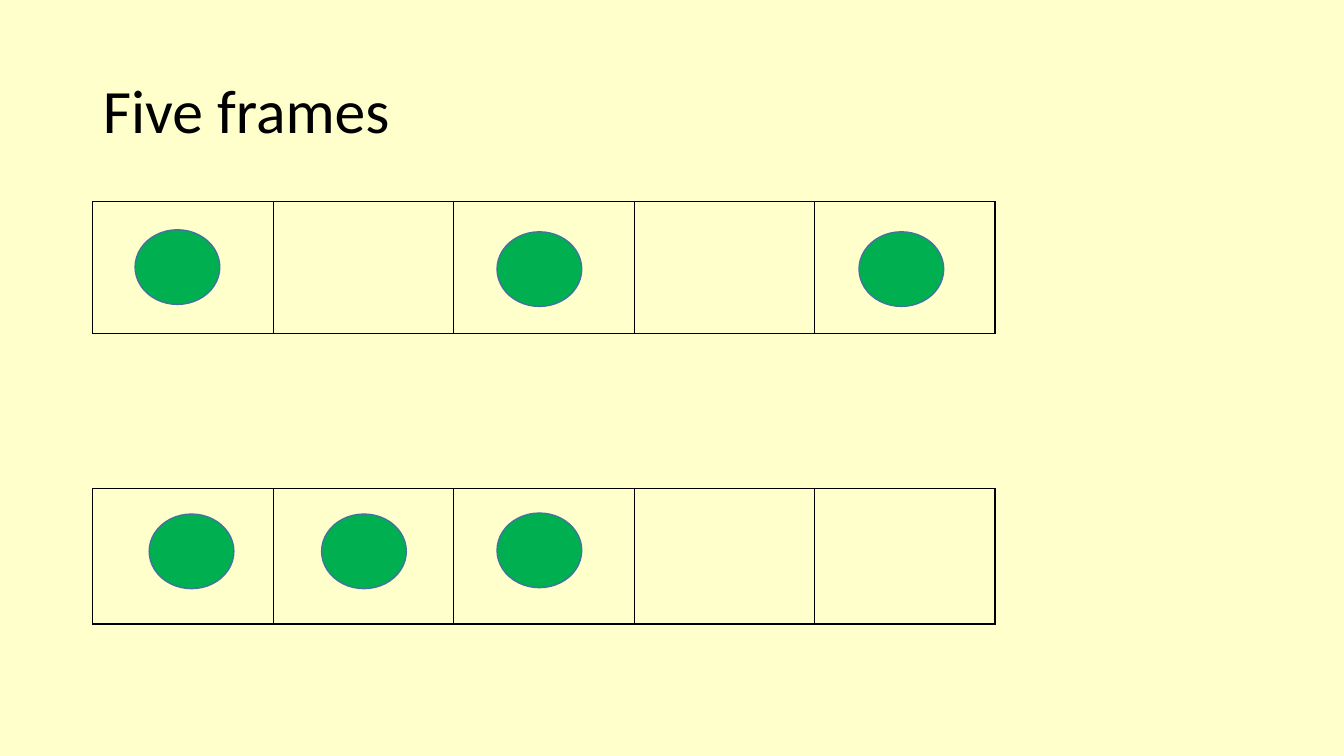
from dataclasses import dataclass

from lxml import etree
from pptx import Presentation
from pptx import util as u
from pptx.dml.color import RGBColor
from pptx.enum import shapes, text
from pptx.oxml.ns import qn
from pptx.slide import Slide
from pptx.text.text import TextFrame

PX = 9144  # 100 px to the inch
COLOURS = {"page": "FFFFCC", "ink": "000000", "dot": "00B050", "rim": "43739E"}
LEFT = 92
CELL = 179
COUNT = 5
DOT_W, DOT_H = 84, 74


@dataclass
class Dot:
    x: int
    y: int


@dataclass
class Frame:
    top: int
    height: int
    dots: list[Dot]


FRAMES = [
    Frame(200, 131, [Dot(134, 228), Dot(493, 230), Dot(852, 230)]),
    Frame(485, 134, [Dot(493, 509), Dot(319, 510), Dot(148, 510)]),
]


def px(n: int) -> u.Emu:
    return u.Emu(n * PX)


def rgb(name: str) -> RGBColor:
    return RGBColor.from_string(COLOURS[name])


def write(frame: TextFrame, words: str, *, size: int, font: str, colour: str) -> None:
    frame.text = words
    frame.word_wrap = True
    frame.auto_size = text.MSO_AUTO_SIZE.NONE
    frame.vertical_anchor = text.MSO_ANCHOR.MIDDLE
    para = frame.paragraphs[0]
    para.alignment = text.PP_ALIGN.LEFT
    para.line_spacing = 0.9
    face = para.runs[0].font
    face.size = u.Pt(size)
    face.name = font
    face.color.rgb = rgb(colour)


def add_title(slide: Slide, words: str) -> None:
    title = slide.shapes.title
    title.left, title.top = px(LEFT), px(40)
    title.width, title.height = px(1150), px(145)
    write(title.text_frame, words, size=44, font="Calibri", colour="ink")


def rule_cell(cell) -> None:
    """Clear the cell's fill and draw a 1 pt line on all four sides."""
    cell.fill.background()
    props = cell._tc.get_or_add_tcPr()
    for i, side in enumerate(("lnL", "lnR", "lnT", "lnB")):
        line = etree.Element(qn(f"a:{side}"), w=str(u.Pt(1)))
        fill = etree.SubElement(line, qn("a:solidFill"))
        etree.SubElement(fill, qn("a:srgbClr"), val=COLOURS["ink"])
        props.insert(i, line)


def add_frame(slide: Slide, frame: Frame) -> None:
    table = slide.shapes.add_table(
        1, COUNT, px(LEFT), px(frame.top), px(CELL * COUNT), px(frame.height)
    ).table
    table.first_row = False
    table.horz_banding = False
    for cell in table.iter_cells():
        rule_cell(cell)


def add_dot(slide: Slide, dot: Dot) -> None:
    oval = slide.shapes.add_shape(
        shapes.MSO_SHAPE.OVAL, px(dot.x), px(dot.y), px(DOT_W), px(DOT_H)
    )
    oval.shadow.inherit = False
    oval.fill.solid()
    oval.fill.fore_color.rgb = rgb("dot")
    oval.line.color.rgb = rgb("rim")
    oval.line.width = u.Pt(1)


def main() -> None:
    deck = Presentation()
    deck.slide_width, deck.slide_height = px(1333), px(750)
    slide = deck.slides.add_slide(deck.slide_layouts.get_by_name("Title Only"))
    slide.background.fill.solid()
    slide.background.fill.fore_color.rgb = rgb("page")

    add_title(slide, "Five frames")
    for frame in FRAMES:
        add_frame(slide, frame)
    for frame in FRAMES:
        for dot in frame.dots:
            add_dot(slide, dot)
    deck.save("out.pptx")


if __name__ == "__main__":
    main()
